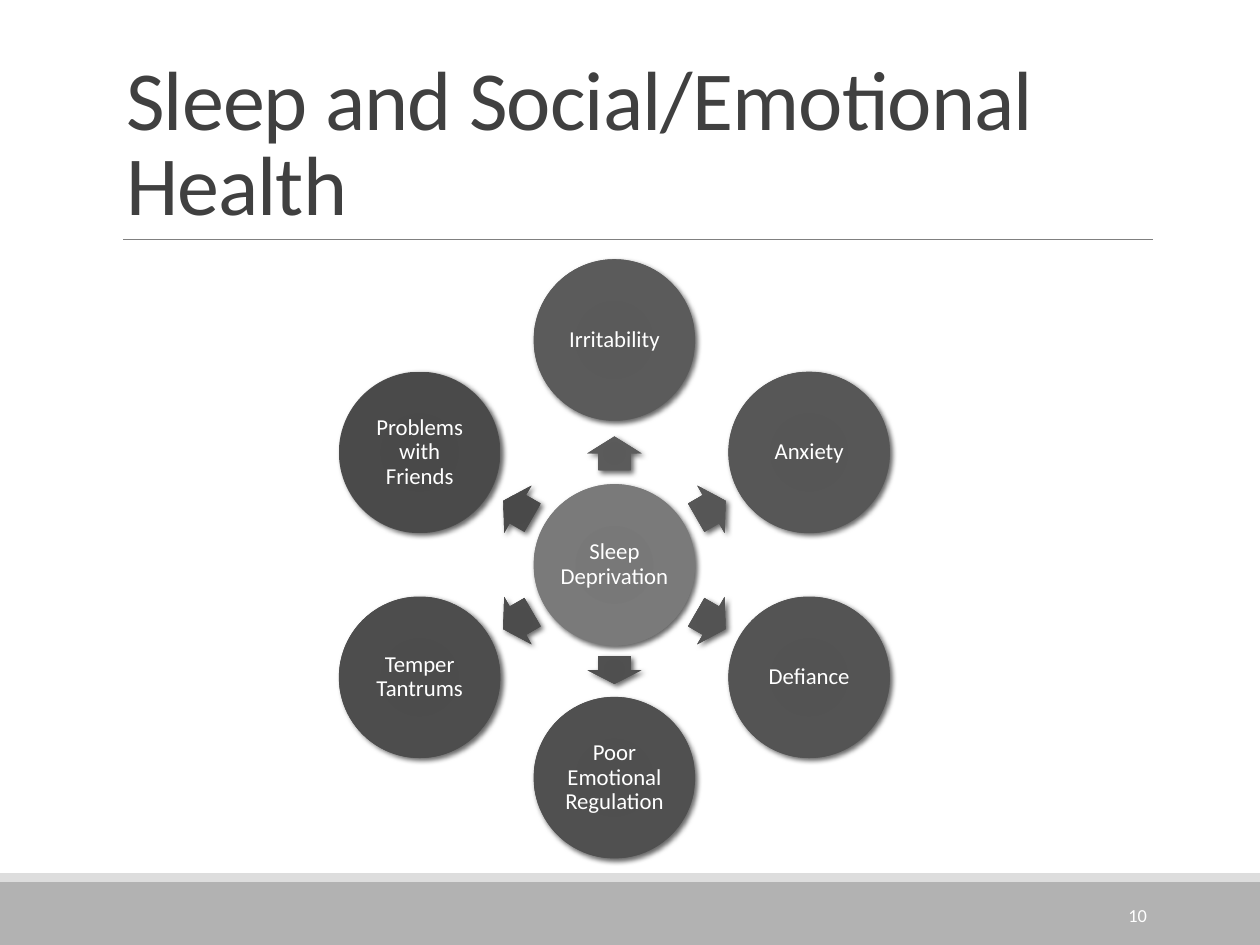
from math import cos, radians, sin

from pptx import Presentation
from pptx.dml.color import RGBColor
from pptx.enum.shapes import MSO_CONNECTOR, MSO_SHAPE as SHAPE
from pptx.enum.text import MSO_ANCHOR as ANCHOR, PP_ALIGN as ALIGN
from pptx.oxml import parse_xml
from pptx.oxml.ns import nsdecls
from pptx.util import Pt

rgb = RGBColor.from_string


def write(sp, text, size, color="FFFFFF", align=ALIGN.LEFT, anchor=ANCHOR.MIDDLE,
          spacing=1.0, after=0, inset=None, tracking=None):
    tf = sp.text_frame
    tf.word_wrap = True
    tf.vertical_anchor = anchor
    if inset is not None:
        tf.margin_left = tf.margin_right = tf.margin_top = tf.margin_bottom = Pt(inset)
    p = tf.paragraphs[0]
    p.alignment, p.line_spacing, p.space_after = align, spacing, Pt(after)
    r = p.add_run()
    r.text = text
    r.font.name, r.font.size = "Calibri", Pt(size)
    r.font.color.rgb = rgb(color)
    if tracking is not None:
        r.font._element.set("spc", str(tracking))


prs = Presentation()
prs.slide_width, prs.slide_height = Pt(720), Pt(540)
s = prs.slides.add_slide(prs.slide_layouts[5])

# Footer bands
for top, height, color in [(504, 36, "B2B2B2"), (499, 5, "DDDDDD")]:
    sp = s.shapes.add_shape(SHAPE.RECTANGLE, 0, Pt(top), Pt(720), Pt(height))
    sp.shadow.inherit = False
    sp.fill.solid()
    sp.fill.fore_color.rgb = rgb(color)
    sp.line.fill.background()

# Title and the rule under it
title = s.shapes.title
title.left, title.top, title.width, title.height = Pt(64.8), Pt(22.5), Pt(594), Pt(114.2)
write(title, "Sleep and Social/Emotional Health", 48, color="404040",
      anchor=ANCHOR.BOTTOM, spacing=0.85, tracking=-50)
rule = s.shapes.add_connector(MSO_CONNECTOR.STRAIGHT, Pt(70.5), Pt(136.8), Pt(658.8), Pt(136.8))
rule.line.color.rgb = rgb("808080")
rule.line.width = Pt(0.5)
rule._element.spPr.append(parse_xml(f"<a:effectLst {nsdecls('a')}/>"))

# Radial diagram: hub, then an arrow and a circle at each angle
HUB_X, HUB_Y, CIRCLE = 351.1, 322.8, 92.3
effects = [
    # text, angle, grey, circle distance, arrow distance, arrow length
    ("Irritability", 270, 0x59, 128.5, 63.7, 19.4),
    ("Anxiety", 330, 0x55, 128.5, 63.7, 19.4),
    ("Defiance", 30, 0x52, 128.5, 63.7, 19.4),
    ("Poor Emotional Regulation", 90, 0x4E, 121.6, 60.1, 15.8),
    ("Temper Tantrums", 150, 0x4B, 128.5, 63.7, 19.4),
    ("Problems with Friends", 210, 0x48, 128.5, 63.7, 19.4),
]
parts = [(SHAPE.OVAL, 0, 0, CIRCLE, CIRCLE, 0x77, "Sleep Deprivation")]
for text, angle, grey, reach, arrow_reach, length in effects:
    parts.append((SHAPE.RIGHT_ARROW, angle, arrow_reach, length, 31.2, grey, None))
    parts.append((SHAPE.OVAL, angle, reach, CIRCLE, CIRCLE, grey, text))

for kind, angle, reach, width, height, grey, text in parts:
    x = HUB_X + reach * cos(radians(angle))
    y = HUB_Y + reach * sin(radians(angle))
    sp = s.shapes.add_shape(kind, Pt(x - width / 2), Pt(y - height / 2), Pt(width), Pt(height))
    sp.line.fill.background()
    if text:
        write(sp, text, 13, align=ALIGN.CENTER, spacing=0.9, after=4.55, inset=1.4)
    else:
        sp.rotation = angle
        sp.adjustments[0], sp.adjustments[1] = 0.6, 0.5

    # Soft radial gradient and drop shadow
    stops = "".join(
        f'<a:gs pos="{pos}000"><a:srgbClr val="{f"{round(grey * gain):02X}" * 3}"/></a:gs>'
        for pos, gain in [(0, 1), (34, 1.01), (70, 1.025), (100, 1.07)])
    spPr = sp._element.spPr
    spPr.insert(2, parse_xml(
        f'<a:gradFill {nsdecls("a")}><a:gsLst>{stops}</a:gsLst><a:path path="circle">'
        '<a:fillToRect l="100000" t="100000" r="100000" b="100000"/></a:path></a:gradFill>'))
    spPr.append(parse_xml(
        f'<a:effectLst {nsdecls("a")}><a:outerShdw blurRad="{Pt(3)}" dist="{Pt(2)}" dir="2700000">'
        '<a:srgbClr val="000000"><a:alpha val="60000"/></a:srgbClr></a:outerShdw></a:effectLst>'))

# Slide number
number = s.shapes.add_textbox(Pt(584.6), Pt(508.5), Pt(77.8), Pt(28.8))
write(number, "10", 10.5, align=ALIGN.RIGHT)

prs.save("out.pptx")
